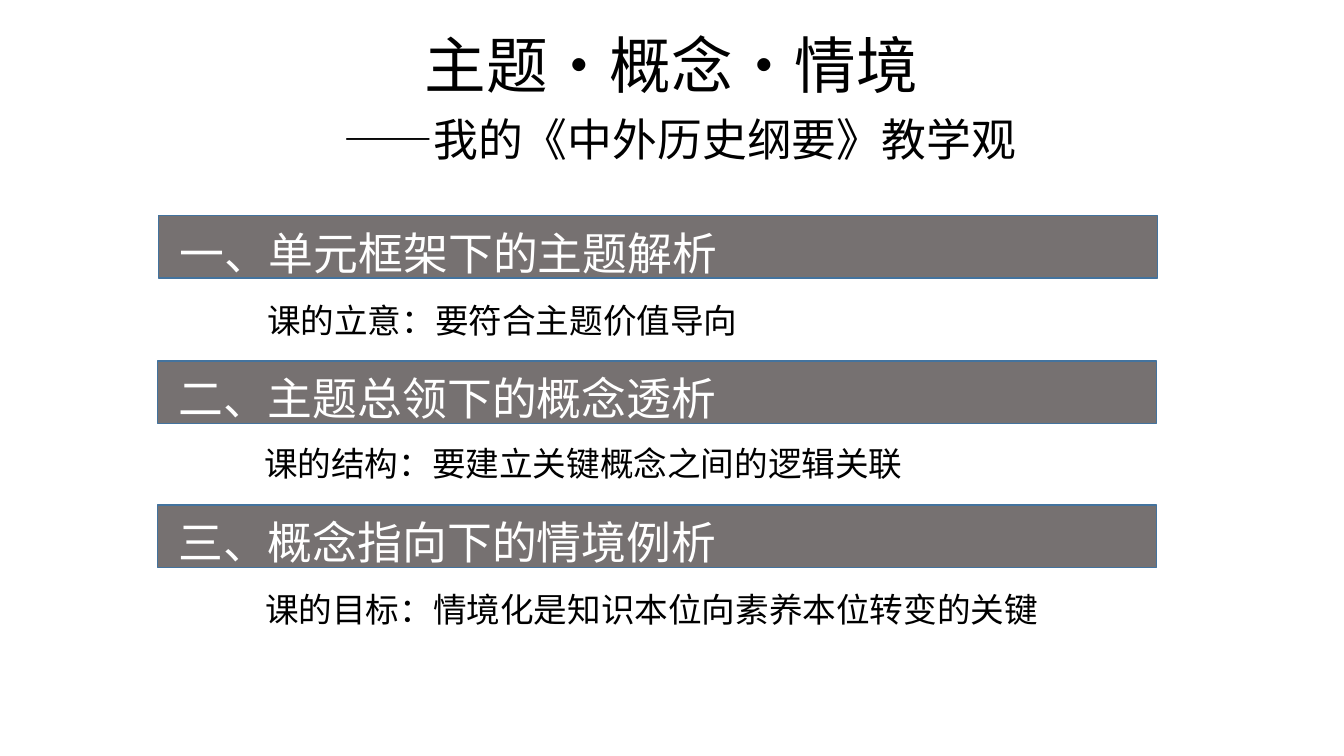
"""Build an outline slide with a centred title and three banded sections."""
from lxml import etree
from pptx import Presentation
from pptx.dml.color import RGBColor
from pptx.enum.shapes import MSO_SHAPE
from pptx.enum.text import MSO_AUTO_SIZE, PP_ALIGN
from pptx.oxml.ns import qn
from pptx.util import Pt

RECT = MSO_SHAPE.RECTANGLE
GROW = MSO_AUTO_SIZE.SHAPE_TO_FIT_TEXT
LEFT, CENTER = PP_ALIGN.LEFT, PP_ALIGN.CENTER

PX = 9144
THEME = {
    "bar": RGBColor(0x76, 0x71, 0x71),
    "edge": RGBColor(0x43, 0x73, 0x9E),
    "white": RGBColor(0xFF, 0xFF, 0xFF),
    "black": RGBColor(0x00, 0x00, 0x00),
    "title": 44,
    "heading": 32,
    "note": 24,
    "latin": "Calibri",
    "sc": "Noto Sans CJK SC",
    "jp": "Noto Sans CJK JP",
}

SECTIONS = [
    (157, 214, "一、单元框架下的主题解析", 255, 293, "课的立意：要符合主题价值导向"),
    (156, 358, "二、主题总领下的概念透析", 252, 434, "课的结构：要建立关键概念之间的逻辑关联"),
    (156, 501, "三、概念指向下的情境例析", 253, 579, "课的目标：情境化是知识本位向素养本位转变的关键"),
]


def box(x, y, w, h):
    return [v * PX for v in (x, y, w, h)]


def add_text(s, place, text, size, color, latin, asian, align=LEFT):
    tf = s.shapes.add_textbox(*place).text_frame
    tf.word_wrap = True
    tf.auto_size = GROW
    tf.text = text
    p = tf.paragraphs[0]
    p.alignment = align
    r = p.runs[0]
    r.font.size = Pt(THEME[size])
    r.font.color.rgb = THEME[color]
    r.font.name = THEME[latin]
    ea = etree.SubElement(r.font._element, qn("a:ea"))
    ea.set("typeface", THEME[asian])


prs = Presentation()
prs.slide_width, prs.slide_height = 1333 * PX, 750 * PX
s = prs.slides.add_slide(prs.slide_layouts[6])

for x, y, heading, note_x, note_y, note in SECTIONS:
    sp = s.shapes.add_shape(RECT, *box(x, y, 991, 62))
    sp.shadow.inherit = False
    sp.fill.solid()
    sp.fill.fore_color.rgb = THEME["bar"]
    sp.line.color.rgb = THEME["edge"]
    sp.line.width = Pt(1)
    add_text(s, box(x + 11, y + 5, 666, 64), heading, "heading", "white", "latin", "sc")
    add_text(s, box(note_x, note_y, 909, 50), note, "note", "black", "latin", "sc")

add_text(s, box(23, 22, 1286, 84), "主题·概念·情境", "title", "black", "sc", "sc", CENTER)
add_text(s, box(124, 106, 1101, 64), "——我的《中外历史纲要》教学观", "heading", "black", "jp", "jp", CENTER)

prs.save("out.pptx")
